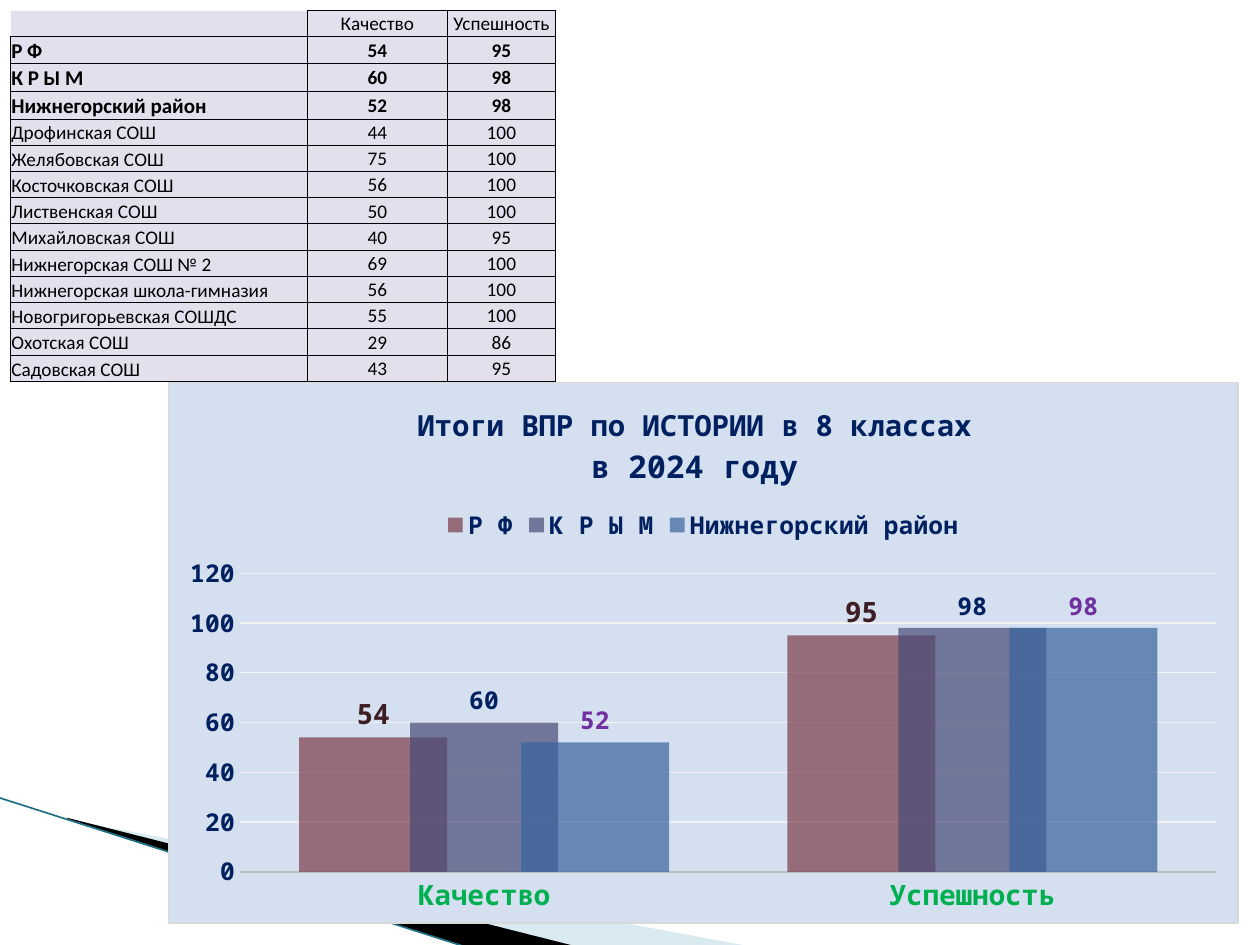
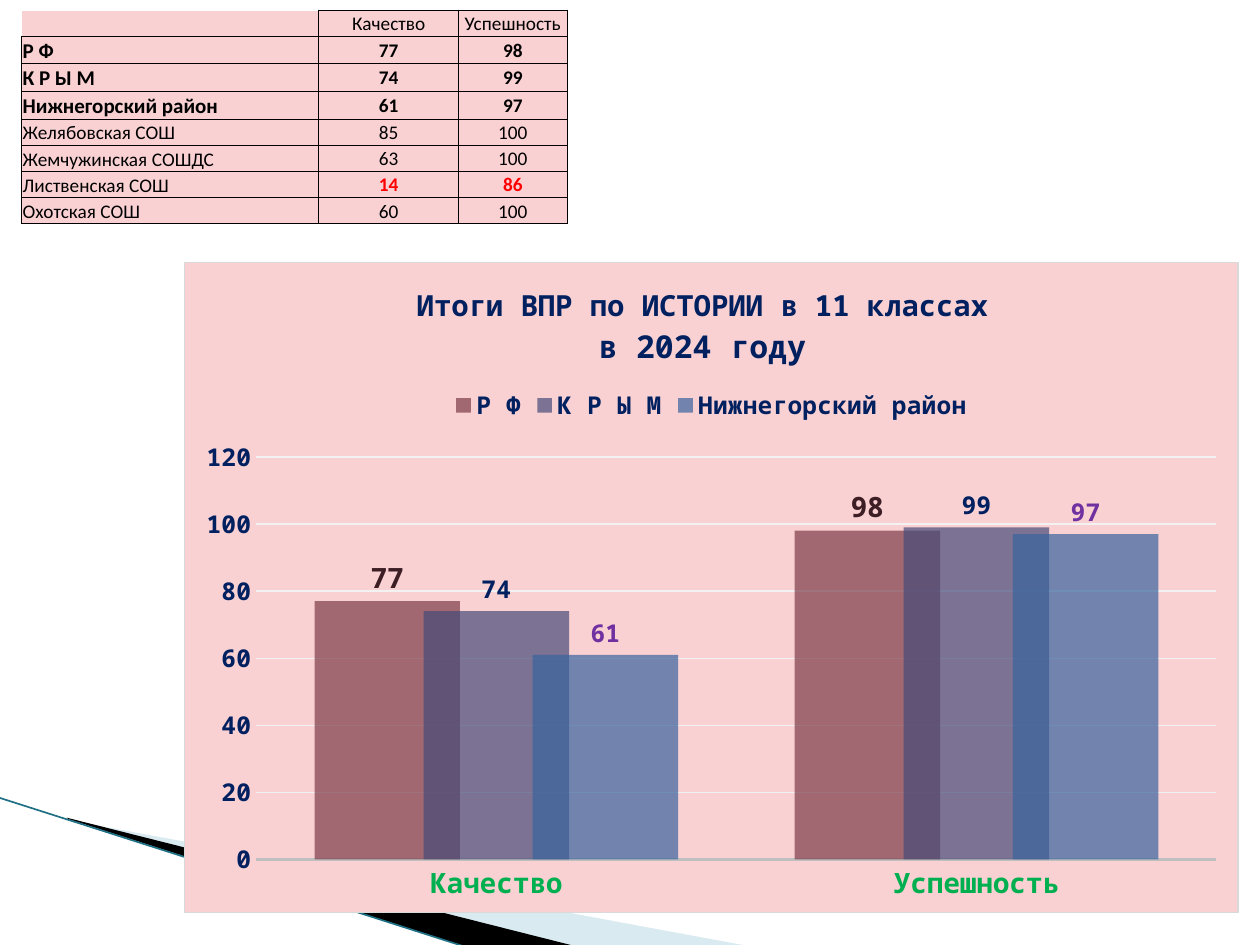
from lxml import etree
from pptx import Presentation
from pptx.chart.data import CategoryChartData
from pptx.dml.color import RGBColor
from pptx.enum import chart as ch, shapes, text
from pptx.oxml import parse_xml
from pptx.oxml.ns import nsdecls, qn
from pptx.util import Inches, Pt

BLACK = RGBColor(0x00, 0x00, 0x00)
RED = RGBColor(0xFF, 0x00, 0x00)
NAVY = RGBColor(0x00, 0x20, 0x60)
GREEN = RGBColor(0x00, 0xB0, 0x50)
PURPLE = RGBColor(0x70, 0x30, 0xA0)
MAROON = RGBColor(0x3E, 0x1E, 0x25)
PALE_BLUE = RGBColor(0xA0, 0xCB, 0xDC)
TEAL = RGBColor(0x1F, 0x70, 0x84)
AXIS_GRAY = RGBColor(0xBF, 0xBF, 0xBF)
GRID_GRAY = RGBColor(0xF2, 0xF2, 0xF2)
LILAC = RGBColor(0xE4, 0xDF, 0xEC)
SKY = RGBColor(0xD4, 0xDF, 0xEF)
PINK = RGBColor(0xF9, 0xD1, 0xD3)
SERIES_STYLES = [
    (RGBColor(0x7D, 0x3C, 0x4A), 16, MAROON),
    (RGBColor(0x47, 0x4B, 0x78), 14, NAVY),
    (RGBColor(0x39, 0x63, 0x9D), 14, PURPLE),
]
MEASURES = ["Качество", "Успешность"]
COLUMNS = [2.36, 1.11, 0.86]
SUMMARY_ROWS = 3


def set_font(font, size, color, bold=False, name="Noto Sans Mono"):
    font.size, font.bold, font.name = Pt(size), bold, name
    font.color.rgb = color


def set_alpha(fill_parent, percent):
    color = fill_parent.find(qn("a:solidFill"))[0]
    etree.SubElement(color, qn("a:alpha"), val=str(percent * 1000))


def set_layout(element, inner=False, **fractions):
    old = element.find(qn("c:layout"))
    if old is not None:
        element.remove(old)
    layout = parse_xml(f"<c:layout {nsdecls('c')}><c:manualLayout/></c:layout>")
    if inner:
        etree.SubElement(layout[0], qn("c:layoutTarget"), val="inner")
    for side in "xy":
        etree.SubElement(layout[0], qn(f"c:{side}Mode"), val="edge")
    for key, value in fractions.items():
        etree.SubElement(layout[0], qn(f"c:{key}"), val=f"{value:.4f}")
    overlay = element.find(qn("c:overlay"))
    if overlay is None:
        element.insert(0, layout)
    else:
        overlay.addprevious(layout)


def set_frame(sp, frame):
    left, top, width, height = [Inches(v) for v in frame]
    for pt in sp._element.iter(qn("a:pt")):
        pt.set("x", str(int(pt.get("x")) + sp.left - left))
        pt.set("y", str(int(pt.get("y")) + sp.top - top))
    for outline in sp._element.iter(qn("a:path")):
        outline.set("w", str(width))
        outline.set("h", str(height))
    sp.left, sp.top, sp.width, sp.height = left, top, width, height


class Deck:
    """Holds the presentation style and draws on the current slide."""

    def __init__(self):
        self.prs = Presentation()
        self.prs.slide_width, self.prs.slide_height = Inches(10), Inches(7.5)
        self.s = None

    def add_slide(self):
        self.s = self.prs.slides.add_slide(self.prs.slide_layouts[6])
        self.add_wedge([(0.55, 6.51), (5.95, 7.51), (4.56, 7.51), (0.55, 6.5)],
                       (0.78, 5.47, 4.16, 1.58), PALE_BLUE, 40)
        self.add_wedge([(0.53, 6.49), (4.57, 7.51), (3.72, 7.52), (0.54, 6.5)],
                       (-0.06, 6.33, 4.16, 0.92), BLACK)
        line = self.s.shapes.add_connector(
            shapes.MSO_CONNECTOR.STRAIGHT, Inches(-0.01), Inches(6.33),
            Inches(3.71), Inches(7.52))
        line.line.color.rgb, line.line.width = TEAL, Pt(0.95)
        etree.SubElement(line._element.spPr, qn("a:effectLst"))

    def add_wedge(self, points, frame, color, alpha=100):
        start, *rest = [(Inches(x), Inches(y)) for x, y in points]
        builder = self.s.shapes.build_freeform(*start)
        builder.add_line_segments(rest)
        sp = builder.convert_to_shape()
        set_frame(sp, frame)
        sp.shadow.inherit = False
        sp.line.fill.background()
        sp.fill.solid()
        sp.fill.fore_color.rgb = color
        set_alpha(sp._element.spPr, alpha)

    def add_borders(self, cell, sides):
        tcPr = cell._tc.get_or_add_tcPr()
        for i, side in enumerate(sides):
            tcPr.insert(i, parse_xml(
                f'<a:ln{side} {nsdecls("a")} w="6350"><a:solidFill>'
                f'<a:srgbClr val="{BLACK}"/></a:solidFill></a:ln{side}>'))

    def add_cell(self, cell, value, fill, size, color, bold, is_name):
        cell.margin_left = cell.margin_right = cell.margin_top = Inches(0.01)
        cell.margin_bottom = 0
        anchor = text.MSO_ANCHOR
        cell.vertical_anchor = anchor.BOTTOM if is_name else anchor.MIDDLE
        cell.fill.solid()
        cell.fill.fore_color.rgb = fill
        p = cell.text_frame.paragraphs[0]
        p.alignment = text.PP_ALIGN.LEFT if is_name else text.PP_ALIGN.CENTER
        set_font(p.font, size, color, bold, "Calibri")
        if value == "":
            etree.SubElement(p._p, qn("a:endParaRPr"), sz=str(size * 100))
            self.add_borders(cell, "RB")
        else:
            p.add_run().text = str(value)
            self.add_borders(cell, "LRTB")

    def add_results_table(self, left, top, rows, fill, weak=()):
        rows = [("", *MEASURES), *rows]
        heights = [(15.75 if 1 <= i <= SUMMARY_ROWS else 15) / 72
                   for i in range(len(rows))]
        table = self.s.shapes.add_table(
            len(rows), len(COLUMNS), Inches(left), Inches(top),
            Inches(sum(COLUMNS)), Inches(sum(heights))).table
        table.first_row = table.horz_banding = False
        for column, width in zip(table.columns, COLUMNS):
            column.width = Inches(width)
        for i, row in enumerate(rows):
            table.rows[i].height = Inches(heights[i])
            summary = 1 <= i <= SUMMARY_ROWS
            for j, value in enumerate(row):
                flagged = j > 0 and row[0] in weak
                self.add_cell(
                    table.cell(i, j), value, fill, 12 if summary and j == 0 else 11,
                    RED if flagged else BLACK, summary or flagged, j == 0)

    def add_results_chart(self, left, top, width, height, rows, title, fill):
        data = CategoryChartData(number_format="0")
        data.categories = MEASURES
        for name, *values in rows[:SUMMARY_ROWS]:
            data.add_series(name, values)
        chart = self.s.shapes.add_chart(
            ch.XL_CHART_TYPE.COLUMN_CLUSTERED, Inches(left), Inches(top),
            Inches(width), Inches(height), data).chart
        set_font(chart.font, 10, BLACK)
        chart._chartSpace.find(qn("c:chart")).addnext(parse_xml(
            f'<c:spPr {nsdecls("c", "a")}><a:solidFill><a:srgbClr val="{fill}"/>'
            '</a:solidFill><a:ln w="9525"><a:solidFill><a:srgbClr val="D9D9D9"/>'
            '</a:solidFill></a:ln></c:spPr>'))
        self.style_plot(chart.plots[0])
        self.style_axes(chart)

        tf = chart.chart_title.text_frame
        lines = [(title, 16.6), ("в 2024 году", 18)]
        for i, (line, size) in enumerate(lines):
            p = tf.add_paragraph() if i else tf.paragraphs[0]
            p.add_run().text = line
            set_font(p.font, size, NAVY, True)
        chart.has_legend = True
        chart.legend.position = ch.XL_LEGEND_POSITION.TOP
        chart.legend.include_in_layout = False
        set_font(chart.legend.font, 14, NAVY, True)

        title_left = width / 2 - 0.06 - len(title) * 0.07
        plot_top, plot_bottom = 1.39 + 0.03 * height, 0.32 + 0.02 * height
        set_layout(chart.chart_title._element, x=title_left / width, y=0.13 / height)
        set_layout(chart.legend._element, x=(width / 2 - 2.09) / width, y=0.96 / height)
        set_layout(
            chart._chartSpace.chart.plotArea, inner=True, x=0.57 / width,
            y=plot_top / height, w=(width - 0.74) / width,
            h=(height - plot_top - plot_bottom) / height)

    def style_plot(self, plot):
        plot.gap_width, plot.overlap = 80, 25
        plot.vary_by_categories = False
        for series, (color, size, label_color) in zip(plot.series, SERIES_STYLES):
            series.format.fill.solid()
            series.format.fill.fore_color.rgb = color
            set_alpha(series._element.spPr, 70)
            labels = series.data_labels
            labels.show_value = True
            labels.number_format, labels.number_format_is_linked = "0", False
            labels.position = ch.XL_LABEL_POSITION.OUTSIDE_END
            set_font(labels.font, size, label_color, True)

    def style_axes(self, chart):
        categories, values = chart.category_axis, chart.value_axis
        for axis, size, color in ((categories, 16, GREEN), (values, 14, NAVY)):
            axis.major_tick_mark = axis.minor_tick_mark = ch.XL_TICK_MARK.NONE
            set_font(axis.tick_labels.font, size, color, True)
        categories.format.line.color.rgb = AXIS_GRAY
        categories.format.line.width = Pt(1.25)
        values.format.line.fill.background()
        values.minimum_scale, values.maximum_scale, values.major_unit = 0, 120, 20
        values.tick_labels.number_format = "0"
        values.tick_labels.number_format_is_linked = False
        grid = values.major_gridlines.format.line
        grid.color.rgb, grid.width = GRID_GRAY, Pt(0.75)


GRADE_8 = [
    ("Р Ф", 54, 95),
    ("К Р Ы М", 60, 98),
    ("Нижнегорский район", 52, 98),
    ("Дрофинская СОШ", 44, 100),
    ("Желябовская СОШ", 75, 100),
    ("Косточковская СОШ", 56, 100),
    ("Лиственская СОШ", 50, 100),
    ("Михайловская СОШ", 40, 95),
    ("Нижнегорская СОШ № 2", 69, 100),
    ("Нижнегорская школа-гимназия", 56, 100),
    ("Новогригорьевская СОШДС", 55, 100),
    ("Охотская СОШ", 29, 86),
    ("Садовская СОШ", 43, 95),
]
GRADE_11 = [
    ("Р Ф", 77, 98),
    ("К Р Ы М", 74, 99),
    ("Нижнегорский район", 61, 97),
    ("Желябовская СОШ", 85, 100),
    ("Жемчужинская СОШДС", 63, 100),
    ("Лиственская СОШ", 14, 86),
    ("Охотская СОШ", 60, 100),
]


def main():
    deck = Deck()
    deck.add_slide()
    deck.add_results_table(0.08, 0.08, GRADE_8, LILAC)
    deck.add_results_chart(
        1.33, 3.03, 8.5, 4.3, GRADE_8, "Итоги ВПР по ИСТОРИИ в 8 классах", SKY)
    deck.add_slide()
    deck.add_results_table(0.17, 0.08, GRADE_11, PINK, weak=["Лиственская СОШ"])
    deck.add_results_chart(
        1.46, 2.08, 8.37, 5.17, GRADE_11, "Итоги ВПР по ИСТОРИИ в 11 классах", PINK)
    deck.prs.save("out.pptx")


if __name__ == "__main__":
    main()
